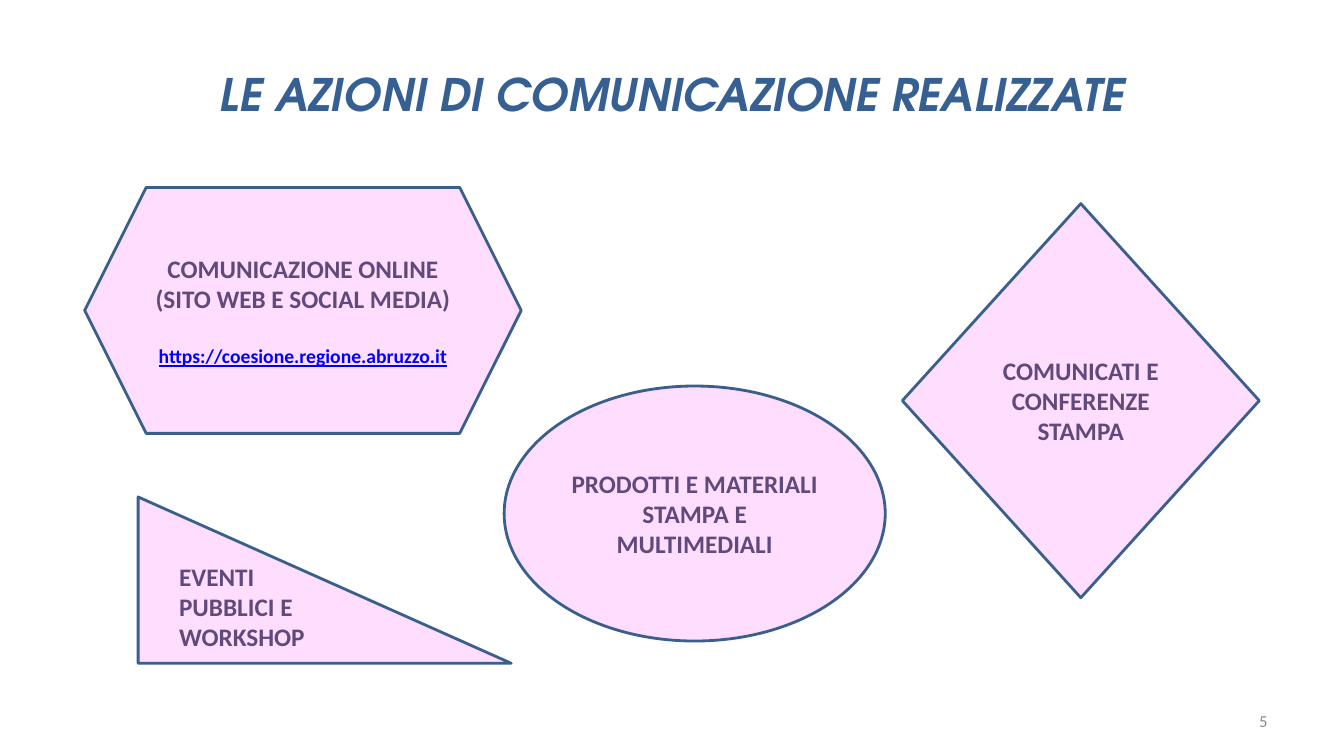
from dataclasses import dataclass

from pptx import Presentation
from pptx.dml.color import RGBColor
from pptx.enum.shapes import MSO_SHAPE
from pptx.enum.text import MSO_ANCHOR, PP_ALIGN
from pptx.util import Inches, Pt

LEFT, CENTER, RIGHT = PP_ALIGN.LEFT, PP_ALIGN.CENTER, PP_ALIGN.RIGHT
MIDDLE = MSO_ANCHOR.MIDDLE
HEXAGON, DIAMOND = MSO_SHAPE.HEXAGON, MSO_SHAPE.DIAMOND
TRIANGLE, ELLIPSE = MSO_SHAPE.RIGHT_TRIANGLE, MSO_SHAPE.OVAL

COLORS = {
    "title": "376092",
    "fill": "FFDDFF",
    "outline": "3A5F8C",
    "label": "604A7B",
    "link": "0000FF",
    "number": "8C8C8C",
}
TITLE_FONT, BODY_FONT = "TeX Gyre Adventor", "Calibri"


@dataclass
class Action:
    kind: MSO_SHAPE
    left: float
    top: float
    width: float
    height: float
    label: str
    align: PP_ALIGN = CENTER
    bottom_margin: float = 0.05
    link: str = ""


ACTIONS = [
    Action(HEXAGON, 0.84, 1.86, 4.33, 2.44,
           "COMUNICAZIONE ONLINE (SITO WEB E SOCIAL MEDIA)",
           link="https://coesione.regione.abruzzo.it"),
    Action(DIAMOND, 8.95, 2.02, 3.54, 3.91, "COMUNICATI E CONFERENZE STAMPA"),
    Action(TRIANGLE, 1.37, 4.93, 3.7, 1.65, "EVENTI PUBBLICI E WORKSHOP",
           align=LEFT, bottom_margin=0.35),
    Action(ELLIPSE, 5, 3.83, 3.78, 2.53,
           "PRODOTTI E MATERIALI STAMPA E MULTIMEDIALI"),
]


def color(name: str) -> RGBColor:
    return RGBColor.from_string(COLORS[name])


def add_span(para, text: str, size: float, color_name: str,
             font: str = BODY_FONT, bold: bool = True,
             italic: bool = False, underline: bool = False) -> None:
    span = para.add_run()
    span.text = text
    span.font.name, span.font.size = font, Pt(size)
    span.font.bold, span.font.italic = bold, italic
    span.font.underline = underline
    span.font.color.rgb = color(color_name)


def add_action(page, action: Action) -> None:
    shape = page.shapes.add_shape(
        action.kind, Inches(action.left), Inches(action.top),
        Inches(action.width), Inches(action.height))
    shape.shadow.inherit = False
    shape.fill.solid()
    shape.fill.fore_color.rgb = color("fill")
    shape.line.color.rgb = color("outline")
    shape.line.width = Pt(2)

    frame = shape.text_frame
    frame.word_wrap = True
    frame.vertical_anchor = MIDDLE
    frame.margin_bottom = Inches(action.bottom_margin)
    para = frame.paragraphs[0]
    para.alignment = action.align
    add_span(para, action.label, 18, "label")
    if action.link:
        para = frame.add_paragraph()
        para.alignment = action.align
        para.space_before = Pt(21.6)
        add_span(para, action.link, 14, "link", underline=True)


def add_title(page) -> None:
    title = page.shapes.title
    title.left, title.top = Inches(0.67), Inches(0.3)
    title.width, title.height = Inches(12), Inches(1.25)
    title.text_frame.vertical_anchor = MIDDLE
    para = title.text_frame.paragraphs[0]
    para.alignment = CENTER
    add_span(para, "LE AZIONI DI COMUNICAZIONE REALIZZATE", 32, "title",
             font=TITLE_FONT, italic=True)


def add_page_number(page) -> None:
    box = page.shapes.add_textbox(
        Inches(9.56), Inches(6.95), Inches(3.11), Inches(0.4))
    box.text_frame.word_wrap = True
    box.text_frame.vertical_anchor = MIDDLE
    para = box.text_frame.paragraphs[0]
    para.alignment = RIGHT
    add_span(para, "5", 12, "number", bold=False)


def main() -> None:
    deck = Presentation()
    deck.slide_width, deck.slide_height = Inches(13.33), Inches(7.5)
    page = deck.slides.add_slide(deck.slide_layouts[5])

    # Title and page number
    add_title(page)
    add_page_number(page)

    # Communication actions
    for action in ACTIONS:
        add_action(page, action)

    deck.save("out.pptx")


if __name__ == "__main__":
    main()
